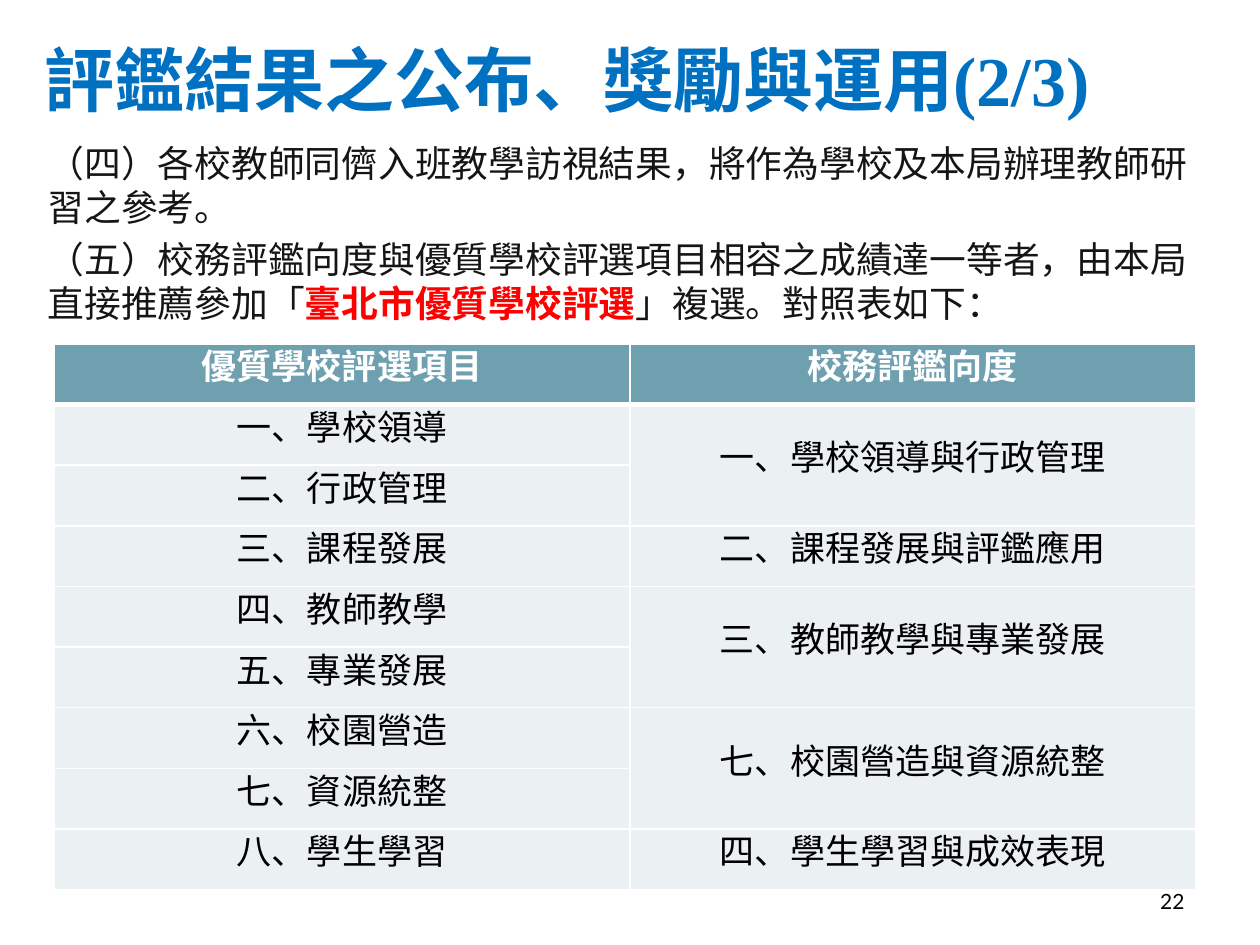
from typing import NamedTuple

from pptx import Presentation
from pptx.dml.color import RGBColor
from pptx.enum.text import MSO_ANCHOR, PP_ALIGN
from pptx.oxml import parse_xml
from pptx.oxml.ns import nsdecls
from pptx.util import Inches, Pt

BLUE = RGBColor(0x00, 0x70, 0xC0)
INK = RGBColor(0x16, 0x15, 0x14)
RED = RGBColor(0xFF, 0x00, 0x00)
BLACK = RGBColor(0x00, 0x00, 0x00)
WHITE = RGBColor(0xFF, 0xFF, 0xFF)
TEAL = RGBColor(0x6E, 0xA0, 0xB0)
PALE = RGBColor(0xEB, 0xF0, 0xF2)
SERIF = "Times New Roman"


class Group(NamedTuple):
    """One evaluation aspect and the selection items it covers."""
    aspect: str
    items: list[str]


HEADERS = ["優質學校評選項目", "校務評鑑向度"]
GROUPS = [
    Group("一、學校領導與行政管理", ["一、學校領導", "二、行政管理"]),
    Group("二、課程發展與評鑑應用", ["三、課程發展"]),
    Group("三、教師教學與專業發展", ["四、教師教學", "五、專業發展"]),
    Group("七、校園營造與資源統整", ["六、校園營造", "七、資源統整"]),
    Group("四、學生學習與成效表現", ["八、學生學習"]),
]
BODY = [
    ["（四）各校教師同儕入班教學訪視結果，將作為學校及本局辦理教師研習之參考。"],
    ["（五）校務評鑑向度與優質學校評選項目相容之成績達一等者，由本局直接推薦參加「",
     "臺北市優質學校評選", "」複選。對照表如下："],
]
KEY_PHRASE = "臺北市優質學校評選"


def style(p, size: float, color: RGBColor, name: str = SERIF, bold: bool = False) -> None:
    p.font.size = Pt(size)
    p.font.name = name
    p.font.bold = bold
    p.font.color.rgb = color


def set_borders(cell, bottom: float) -> None:
    """White cell borders, 1 pt except for the bottom one."""
    tc_pr = cell._tc.get_or_add_tcPr()
    widths = {"lnL": 1, "lnR": 1, "lnT": 1, "lnB": bottom}
    for i, (tag, width) in enumerate(widths.items()):
        tc_pr.insert(i, parse_xml(
            f'<a:{tag} {nsdecls("a")} w="{Pt(width)}"><a:solidFill>'
            f'<a:srgbClr val="{WHITE}"/></a:solidFill></a:{tag}>'))


def format_cell(cell, header: bool) -> None:
    cell.fill.solid()
    cell.fill.fore_color.rgb = TEAL if header else PALE
    set_borders(cell, 3 if header else 1)
    cell.vertical_anchor = MSO_ANCHOR.MIDDLE
    cell.margin_left = cell.margin_right = Inches(0.08)
    cell.margin_top = cell.margin_bottom = 0
    p = cell.text_frame.paragraphs[0]
    p.alignment = PP_ALIGN.CENTER
    p.line_spacing = Pt(18)
    style(p, 20, WHITE if header else BLACK, bold=header)


prs = Presentation()
prs.slide_width, prs.slide_height = Inches(10), Inches(7.5)
s = prs.slides.add_slide(prs.slide_layouts[5])

# Title
title = s.shapes.title
title.left, title.top, title.width, title.height = 0, 0, Inches(9), Inches(1.25)
tf = title.text_frame
tf.text = "評鑑結果之公布、獎勵與運用(2/3)"
tf.vertical_anchor = MSO_ANCHOR.MIDDLE
tf.paragraphs[0].alignment = PP_ALIGN.CENTER
style(tf.paragraphs[0], 40, BLUE, bold=True)

# Body paragraphs
tf = s.shapes.add_textbox(Inches(0.28), Inches(1.07), Inches(9.45), Inches(1.6)).text_frame
tf.word_wrap = True
for i, parts in enumerate(BODY):
    p = tf.paragraphs[0] if i == 0 else tf.add_paragraph()
    if i:
        p.space_before = Pt(4.2)
    p.line_spacing = Pt(25.2)
    style(p, 21, INK)
    for part in parts:
        r = p.add_run()
        r.text = part
        if part == KEY_PHRASE:
            r.font.bold = True
            r.font.color.rgb = RED

# Comparison table
row_count = 1 + sum(len(g.items) for g in GROUPS)
table = s.shapes.add_table(row_count, 2, Inches(0.43), Inches(2.73),
                           Inches(9.06), Inches(4.33)).table
table.columns[0].width, table.columns[1].width = Inches(4.57), Inches(4.49)
for col, text in enumerate(HEADERS):
    table.cell(0, col).text = text
row = 1
for group in GROUPS:
    last = row + len(group.items) - 1
    table.cell(row, 1).text = group.aspect
    if last > row:
        table.cell(row, 1).merge(table.cell(last, 1))
    for item in group.items:
        table.cell(row, 0).text = item
        row += 1
for row in range(row_count):
    for col in range(2):
        format_cell(table.cell(row, col), header=row == 0)

# Page number
tf = s.shapes.add_textbox(Inches(7.17), Inches(6.95), Inches(2.33), Inches(0.4)).text_frame
tf.word_wrap = True
tf.vertical_anchor = MSO_ANCHOR.MIDDLE
p = tf.paragraphs[0]
p.text = "22"
p.alignment = PP_ALIGN.RIGHT
style(p, 12, BLACK, "Lato")

prs.save("out.pptx")
